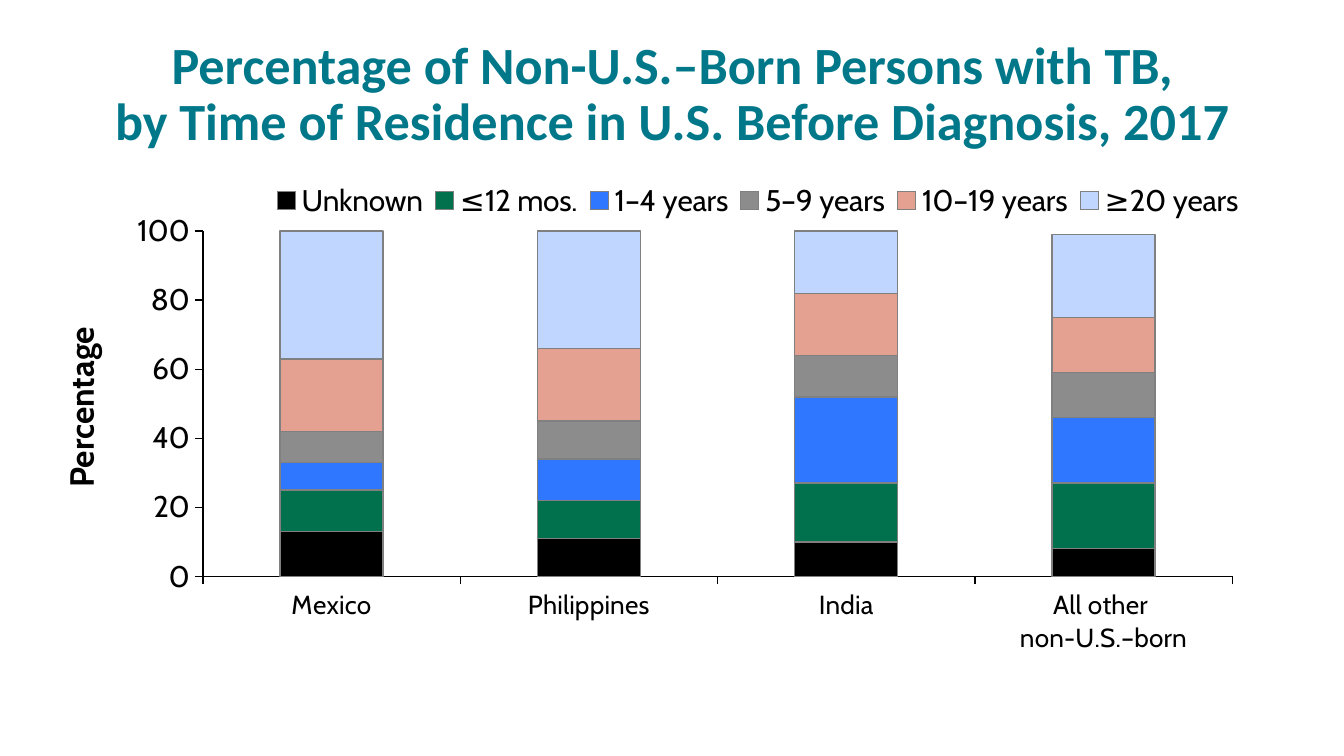
from dataclasses import dataclass
from typing import NamedTuple

from lxml.etree import SubElement
from pptx import Presentation
from pptx.chart.data import CategoryChartData
from pptx.dml.color import RGBColor
from pptx.enum.chart import XL_CHART_TYPE, XL_LEGEND_POSITION, XL_TICK_MARK
from pptx.enum.text import MSO_ANCHOR, PP_ALIGN
from pptx.oxml.ns import qn
from pptx.util import Inches, Pt


@dataclass(frozen=True)
class Theme:
    title: str = "00788A"
    ink: str = "000000"
    edge: str = "808080"
    head: str = "Calibri"
    body: str = "Cabin"
    title_size: int = 28
    label_size: int = 18
    axis_size: int = 16
    group_size: int = 14
    line: float = 0.75


class Box(NamedTuple):
    left: float
    top: float
    width: float
    height: float

    def within(self, outer: "Box") -> "Box":
        """Give this box as fractions of the outer one."""
        return Box((self.left - outer.left) / outer.width,
                   (self.top - outer.top) / outer.height,
                   self.width / outer.width, self.height / outer.height)


class Stay(NamedTuple):
    name: str
    color: str
    shares: tuple[int, ...]


THEME = Theme()
CHART = Box(0.81, 1.27, 8.5, 3.65)
PLOT = Box(1.51, 1.72, 7.66, 2.57)
LEGEND = Box(1.97, 1.35, 7.34, 0.29)
GROUPS = ("Mexico", "Philippines", "India", "All other \nnon-U.S.–born")
STAYS = (
    Stay("Unknown", "000000", (13, 11, 10, 8)),
    Stay("≤12 mos.", "00704D", (12, 11, 17, 19)),
    Stay("1–4 years", "3077FF", (8, 12, 25, 19)),
    Stay("5–9 years", "8C8C8C", (9, 11, 12, 13)),
    Stay("10–19 years", "E4A090", (21, 21, 18, 16)),
    Stay("≥20 years", "C1D6FF", (37, 34, 18, 24)),
)


def style(font, size: float, name: str, color: str, bold: bool = False) -> None:
    font.size, font.name, font.bold = Pt(size), name, bold
    font.color.rgb = RGBColor.from_string(color)


def stroke(line, color: str) -> None:
    line.color.rgb = RGBColor.from_string(color)
    line.width = Pt(THEME.line)


def add_text(slide, box: Box, text: str, *, size: float, name: str, color: str,
             anchor=MSO_ANCHOR.TOP, space=None, turn: float = 0) -> None:
    shape = slide.shapes.add_textbox(*map(Inches, box))
    shape.rotation = turn
    frame = shape.text_frame
    frame.word_wrap = True
    frame.vertical_anchor = anchor
    para = frame.paragraphs[0]
    para.text = text
    para.alignment = PP_ALIGN.CENTER
    para.line_spacing = space
    for run in para.runs:
        style(run.font, size, name, color, bold=True)


def place(part, index: int, box: Box, inner: bool = False) -> None:
    """Fix a chart part at a box given in slide inches."""
    layout = part.find(qn("c:layout"))
    if layout is None:
        layout = SubElement(part, qn("c:layout"))
        part.insert(index, layout)
    manual = SubElement(layout, qn("c:manualLayout"))
    rules = [("layoutTarget", "inner")] if inner else []
    rules += [("xMode", "edge"), ("yMode", "edge")]
    rules += zip("xywh", map(str, box.within(CHART)))
    for tag, value in rules:
        SubElement(manual, qn(f"c:{tag}")).set("val", value)


def format_axis(axis, size: float) -> None:
    axis.has_major_gridlines = False
    axis.major_tick_mark = XL_TICK_MARK.OUTSIDE
    axis.minor_tick_mark = XL_TICK_MARK.NONE
    style(axis.tick_labels.font, size, THEME.body, THEME.ink)
    stroke(axis.format.line, THEME.ink)


def add_stack(slide) -> None:
    data = CategoryChartData(number_format="0")
    data.categories = GROUPS
    for stay in STAYS:
        data.add_series(stay.name, stay.shares)
    chart = slide.shapes.add_chart(
        XL_CHART_TYPE.COLUMN_STACKED, *map(Inches, CHART), data).chart
    style(chart.font, THEME.label_size, THEME.body, THEME.ink)
    chart.has_title = False

    plot = chart.plots[0]
    plot.gap_width, plot.overlap = 150, 100
    plot.vary_by_categories = False
    for series, stay in zip(plot.series, STAYS):
        series.format.fill.solid()
        series.format.fill.fore_color.rgb = RGBColor.from_string(stay.color)
        stroke(series.format.line, THEME.edge)

    format_axis(chart.category_axis, THEME.group_size)
    scale = chart.value_axis
    format_axis(scale, THEME.axis_size)
    scale.minimum_scale, scale.maximum_scale, scale.major_unit = 0, 100, 20
    scale.tick_labels.number_format = "0"
    scale.tick_labels.number_format_is_linked = False

    chart.has_legend = True
    legend = chart.legend
    legend.position = XL_LEGEND_POSITION.TOP
    legend.include_in_layout = False
    style(legend.font, THEME.axis_size, THEME.body, THEME.ink)

    root = chart.element
    place(root.find(".//" + qn("c:plotArea")), 0, PLOT, inner=True)
    place(root.find(".//" + qn("c:legend")), 1, LEGEND)


def main() -> None:
    deck = Presentation()
    deck.slide_width = Inches(10)
    deck.slide_height = deck.slide_width * 9 // 16
    slide = deck.slides.add_slide(deck.slide_layouts[6])
    add_text(slide, Box(0.5, 0.23, 9, 0.94),
             "Percentage of Non-U.S.–Born Persons with TB,\v"
             "by Time of Residence in U.S. Before Diagnosis, 2017",
             size=THEME.title_size, name=THEME.head, color=THEME.title,
             anchor=MSO_ANCHOR.BOTTOM, space=Pt(30))
    add_text(slide, Box(-0.5, 2.83, 2.2, 0.4), "Percentage",
             size=THEME.label_size, name=THEME.body, color=THEME.ink, turn=270)
    add_stack(slide)
    deck.save("out.pptx")


if __name__ == "__main__":
    main()
